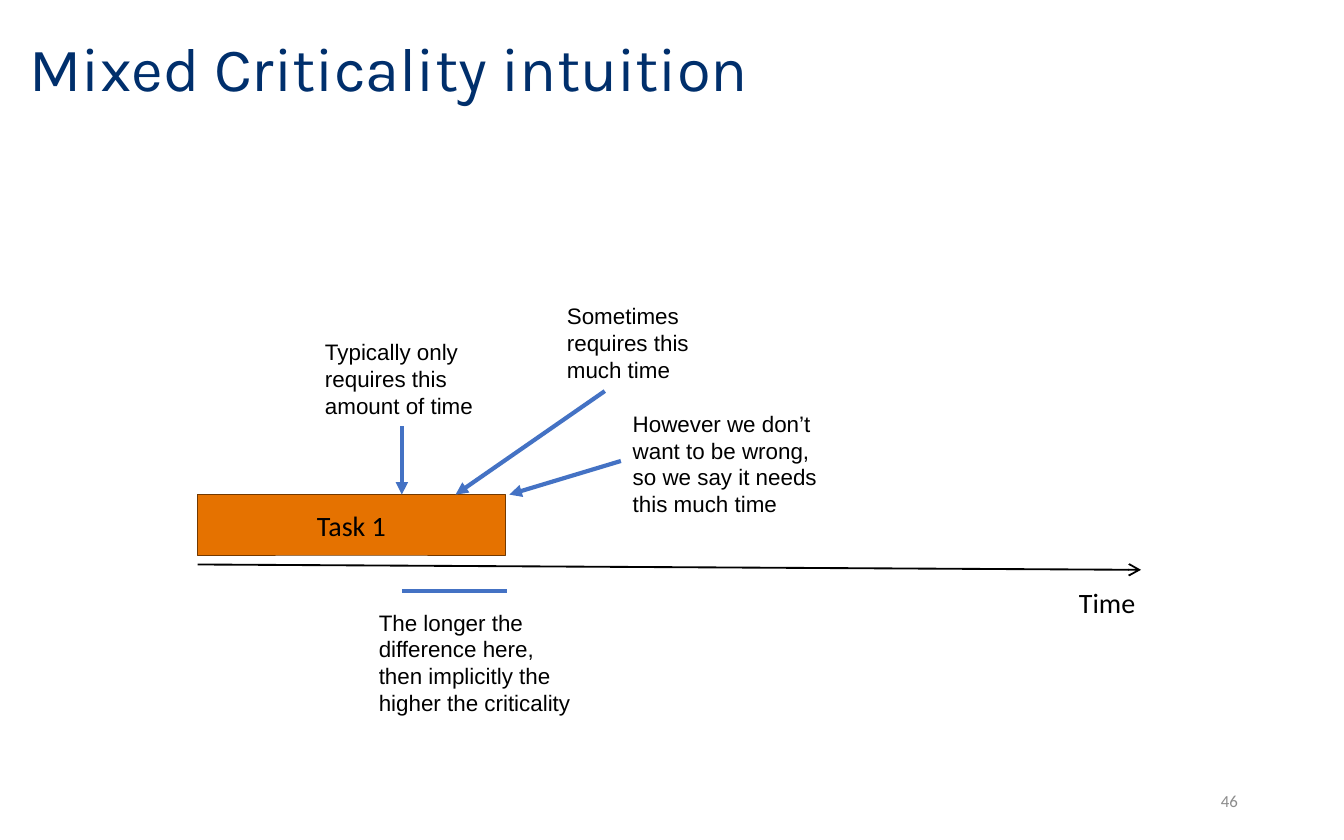
import pptx
import pptx.util
import pptx.dml.color
import pptx.enum.shapes
import pptx.enum.text
import pptx.oxml.ns
import lxml.etree

Align = pptx.enum.text.PP_ALIGN
Anchor = pptx.enum.text.MSO_ANCHOR
Fit = pptx.enum.text.MSO_AUTO_SIZE


def tint(code):
    """Turn a hex string into a colour."""
    return pptx.dml.color.RGBColor.from_string(code)


class Deck:
    """Hold the style and the current slide, on a grid of 100 columns by 62.5 rows."""

    cols, rows = 100, 62.5
    navy, blue, black, grey = "002F6C", "4472C4", "000000", "8C8C8C"
    orange, brown = "E57200", "723900"
    head, body, note = "Karla", "Calibri", "Arial"

    def __init__(self):
        self.show = pptx.Presentation()
        self.show.slide_width = pptx.util.Inches(10)
        self.show.slide_height = pptx.util.Inches(6.25)
        self.page = self.show.slides.add_slide(self.show.slide_layouts[5])

    def across(self, col):
        return round(self.show.slide_width * col / self.cols)

    def down(self, row):
        return round(self.show.slide_height * row / self.rows)

    def place(self, col, row, wide, high):
        return self.across(col), self.down(row), self.across(wide), self.down(high)

    def label(self, shape, words, font, size, color, align=Align.LEFT,
              anchor=Anchor.TOP, wrap=True, fit=Fit.NONE):
        frame = shape.text_frame
        frame.word_wrap = wrap
        frame.auto_size = fit
        frame.vertical_anchor = anchor
        para = frame.paragraphs[0]
        para.alignment = align
        run = para.add_run()
        run.text = words
        run.font.name = font
        run.font.size = pptx.util.Pt(size)
        run.font.color.rgb = tint(color)
        return para

    def title(self, box, words):
        shape = self.page.shapes.title
        shape.left, shape.top, shape.width, shape.height = self.place(*box)
        para = self.label(shape, words, self.head, 33, self.navy, anchor=Anchor.MIDDLE)
        para.line_spacing = 0.9

    def text(self, box, words, font=note, size=12, color=black, **style):
        shape = self.page.shapes.add_textbox(*self.place(*box))
        self.label(shape, words, font, size, color, **style)

    def block(self, box, words):
        kind = pptx.enum.shapes.MSO_SHAPE.RECTANGLE
        shape = self.page.shapes.add_shape(kind, *self.place(*box))
        shape.shadow.inherit = False
        shape.fill.solid()
        shape.fill.fore_color.rgb = tint(self.orange)
        shape.line.color.rgb = tint(self.brown)
        shape.line.width = pptx.util.Pt(0.5)
        self.label(shape, words, self.body, 15, self.black, Align.CENTER, Anchor.MIDDLE)

    def line(self, start, end, tip=None, color=blue, width=2.25):
        kind = pptx.enum.shapes.MSO_CONNECTOR.STRAIGHT
        shape = self.page.shapes.add_connector(
            kind, self.across(start[0]), self.down(start[1]),
            self.across(end[0]), self.down(end[1]))
        shape.line.color.rgb = tint(color)
        shape.line.width = pptx.util.Pt(width)
        name = pptx.oxml.ns.qn
        props = shape._element.spPr
        if tip:
            lxml.etree.SubElement(props.find(name("a:ln")), name("a:tailEnd"), type=tip)
        lxml.etree.SubElement(props, name("a:effectLst"))


def main():
    """Build the slide and save it."""
    deck = Deck()
    left, right, top = 14.7, 37.6, 36.8
    mean, most = 29.9, 33.9

    deck.title((1.2, 1, 85.2, 8.6), "Mixed Criticality intuition")
    deck.text((70.6, 57.9, 22.5, 3.3), "46", deck.body, 9, deck.grey,
              align=Align.RIGHT, anchor=Anchor.MIDDLE)
    deck.line((left, 42), (84.9, 42.4), "arrow", deck.black, 1)
    deck.block((left, top, right - left, 4.5), "Task 1")
    deck.text((79.3, 43.1, 6.3, 3.5), "Time", deck.body, 15,
              wrap=False, fit=Fit.SHAPE_TO_FIT_TEXT)

    for start, end in (((mean, 31.7), mean), ((45, 29.1), most), ((46.2, 34.3), 37.9)):
        deck.line(start, (end, top), "triangle")
    deck.line((mean, 44), (37.7, 44))

    notes = (
        ((23.2, 24.7, 13.3, 7.1), "Typically only requires this amount of time"),
        ((41.2, 22, 13.3, 7.1), "Sometimes requires this much time"),
        ((46.1, 30, 17, 9.1),
         "However we don’t want to be wrong, so we say it needs this much time"),
        ((27.2, 44.8, 17, 9.1),
         "The longer the difference here, then implicitly the higher the criticality"),
    )
    for box, words in notes:
        deck.text(box, words, fit=Fit.SHAPE_TO_FIT_TEXT)

    deck.show.save("out.pptx")


if __name__ == "__main__":
    main()
